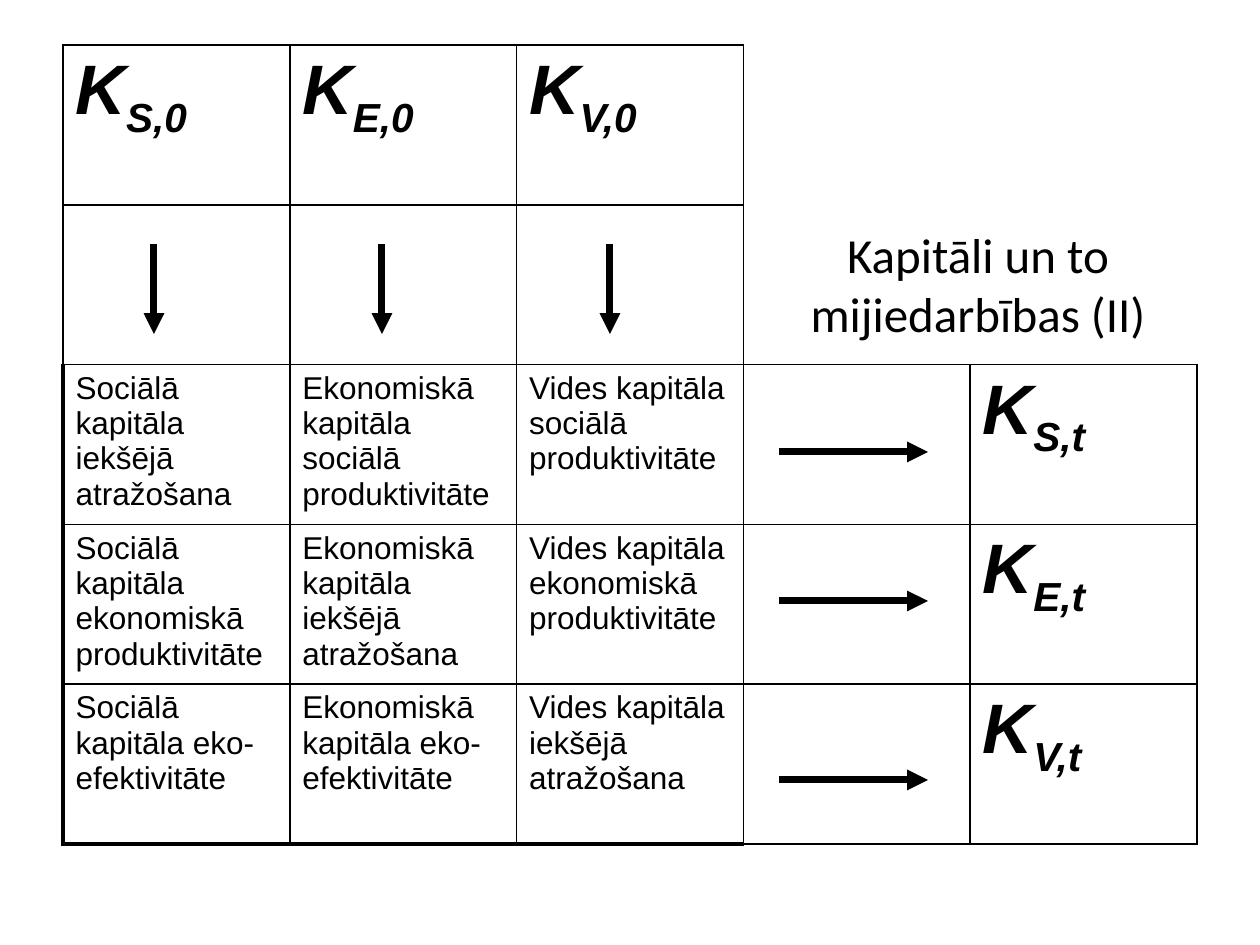
from lxml.etree import SubElement
from pptx import Presentation
from pptx.dml.color import RGBColor
from pptx.enum.shapes import MSO_CONNECTOR
from pptx.enum.text import MSO_ANCHOR, PP_ALIGN
from pptx.oxml.ns import qn
from pptx.util import Emu, Pt

PX = 914400 / 126
COLORS = {"ink": "000000"}
CAPITALS = ["S", "E", "V"]
INTERACTIONS = [
    ["Sociālā kapitāla iekšējā atražošana",
     "Ekonomiskā kapitāla sociālā produktivitāte",
     "Vides kapitāla sociālā produktivitāte"],
    ["Sociālā kapitāla ekonomiskā produktivitāte",
     "Ekonomiskā kapitāla iekšējā atražošana",
     "Vides kapitāla ekonomiskā produktivitāte"],
    ["Sociālā kapitāla eko-efektivitāte",
     "Ekonomiskā kapitāla eko-efektivitāte",
     "Vides kapitāla iekšējā atražošana"],
]


def px(value):
    return Emu(round(value * PX))


def ink():
    return RGBColor.from_string(COLORS["ink"])


def add_run(paragraph, text, size, font_name="Arial", strong=False, baseline=0):
    run = paragraph.add_run()
    run.text = text
    run.font.size = Pt(size)
    run.font.name = font_name
    run.font.bold = run.font.italic = strong
    run.font.color.rgb = ink()
    if baseline:
        run._r.get_or_add_rPr().set("baseline", str(baseline * 1000))


def write_symbol(cell, index):
    paragraph = cell.text_frame.paragraphs[0]
    add_run(paragraph, "K", 40, strong=True)
    add_run(paragraph, index, 40, strong=True, baseline=-25)


def set_border(cell, side, width):
    line = SubElement(cell._tc.get_or_add_tcPr(), qn(f"a:ln{side}"), w=str(Pt(width)))
    if width:
        fill = SubElement(line, qn("a:solidFill"))
        SubElement(fill, qn("a:srgbClr"), val=COLORS["ink"])
    else:
        SubElement(line, qn("a:noFill"))


def border_widths(row, column):
    if row < 2 and column > 2:
        return {"L": int(column == 3), "R": 0, "T": 0, "B": int(row == 1)}
    return {
        "L": 2.25 if row > 1 and column == 0 else 1,
        "R": 1,
        "T": 1,
        "B": 2.25 if row == 4 and column < 3 else 1,
    }


def add_matrix(slide, left, top, width, height):
    table = slide.shapes.add_table(5, 5, px(left), px(top), px(width), px(height)).table
    table.first_row = table.horz_banding = False
    for row in range(5):
        for column in range(5):
            cell = table.cell(row, column)
            for side, line_width in border_widths(row, column).items():
                set_border(cell, side, line_width)
            cell.fill.background()
    for index, capital in enumerate(CAPITALS):
        write_symbol(table.cell(0, index), f"{capital},0")
        write_symbol(table.cell(index + 2, 4), f"{capital},t")
        for column, text in enumerate(INTERACTIONS[index]):
            paragraph = table.cell(index + 2, column).text_frame.paragraphs[0]
            add_run(paragraph, text, 18)


def add_arrow(slide, left, top, width, height):
    arrow = slide.shapes.add_connector(
        MSO_CONNECTOR.STRAIGHT, px(left), px(top), px(left + width), px(top + height))
    arrow.line.width = Pt(4)
    arrow.line.color.rgb = ink()
    SubElement(arrow.line._get_or_add_ln(), qn("a:tailEnd"), type="triangle")
    SubElement(arrow._element.spPr, qn("a:effectLst"))


def add_arrows(slide, left, top):
    for column in range(3):
        add_arrow(slide, left + 91 + 228 * column, top + 199, 0, 90)
    for offset in (407, 556, 735):
        add_arrow(slide, left + 716, top + offset, 149, 0)


def add_title(slide, left, top, width, height):
    title = slide.shapes.add_textbox(px(left), px(top), px(width), px(height))
    frame = title.text_frame
    frame.word_wrap = True
    frame.vertical_anchor = MSO_ANCHOR.MIDDLE
    paragraph = frame.paragraphs[0]
    paragraph.alignment = PP_ALIGN.CENTER
    add_run(paragraph, "Kapitāli un to mijiedarbības (II)", 28, "Calibri")


def main():
    presentation = Presentation()
    presentation.slide_width = px(1260)
    presentation.slide_height = px(945)
    slide = presentation.slides.add_slide(presentation.slide_layouts[6])
    add_matrix(slide, 63, 45, 1134, 799)
    add_arrows(slide, 63, 45)
    add_title(slide, 779, 221, 398, 125)
    presentation.save("out.pptx")


if __name__ == "__main__":
    main()
